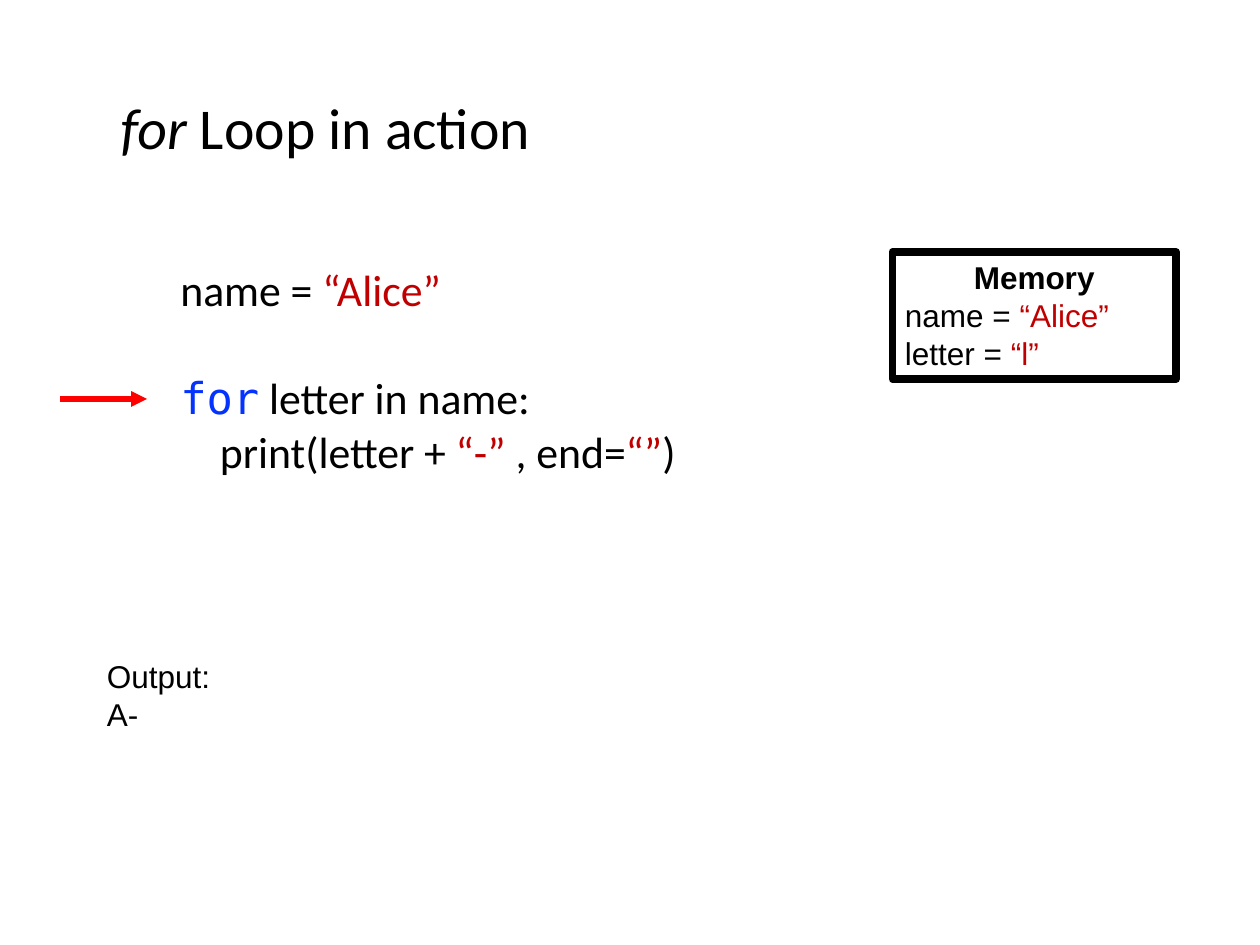
from lxml.etree import SubElement
from pptx import Presentation
from pptx.dml.color import RGBColor
from pptx.enum.shapes import MSO_CONNECTOR, MSO_SHAPE
from pptx.enum.text import MSO_ANCHOR, PP_ALIGN
from pptx.oxml.ns import qn
from pptx.util import Inches, Pt

COLS, ROWS = 120, 90
CELL = Inches(10) / COLS
BLACK, RED, BLUE, ARROW_RED = "000000", "C00000", "0432FF", "FF0000"

TITLE = {"size": Pt(33), "name": "Calibri"}
CODE = {"size": Pt(25), "name": "Calibri"}
KEYWORD = {"name": "DejaVu Sans Mono", "color": BLUE}
NOTE = {"size": Pt(18), "name": "Arial"}
STRING = {"color": RED}
TIGHT = {"line_spacing": 0.9}


def grid(*cells):
    """Turn grid columns and rows into slide lengths."""
    return [round(c * CELL) for c in cells]


def rgb(color):
    return RGBColor.from_string(color)


def set_attrs(obj, values):
    for name, value in values.items():
        setattr(obj, name, value)


def write(sp, base, paragraphs):
    """Fill a shape from (paragraph format, [(text, font format), ...]) pairs."""
    tf = sp.text_frame
    tf.word_wrap = True
    for i, (layout, runs) in enumerate(paragraphs):
        p = tf.add_paragraph() if i else tf.paragraphs[0]
        set_attrs(p, layout)
        for text, extra in runs:
            r = p.add_run()
            r.text = text
            font = {"color": BLACK, **base, **extra}
            r.font.color.rgb = rgb(font.pop("color"))
            set_attrs(r.font, font)


def add_text(s, box, base, paragraphs, anchor=MSO_ANCHOR.TOP):
    sp = s.shapes.add_textbox(*grid(*box))
    sp.text_frame.vertical_anchor = anchor
    write(sp, base, paragraphs)


def add_frame(s, box, base, paragraphs):
    sp = s.shapes.add_shape(MSO_SHAPE.RECTANGLE, *grid(*box))
    sp.shadow.inherit = False
    sp.fill.background()
    sp.line.color.rgb = rgb(BLACK)
    sp.line.width = Pt(4.5)
    sp.text_frame.vertical_anchor = MSO_ANCHOR.TOP
    write(sp, base, paragraphs)


def add_arrow(s, ends, color, width):
    line = s.shapes.add_connector(MSO_CONNECTOR.STRAIGHT, *grid(*ends))
    line.line.color.rgb = rgb(color)
    line.line.width = Pt(width)
    SubElement(line.line._get_or_add_ln(), qn("a:tailEnd"), type="triangle")
    SubElement(line._element.spPr, qn("a:effectLst"))


def main():
    prs = Presentation()
    prs.slide_width, prs.slide_height = grid(COLS, ROWS)
    s = prs.slides.add_slide(prs.slide_layouts[6])

    add_text(s, (10.3, 8, 104, 9), TITLE, [
        (TIGHT, [("for", {"italic": True}), (" Loop in action", {})]),
    ], MSO_ANCHOR.MIDDLE)

    add_text(s, (16, 25, 54, 55), CODE, [
        (TIGHT, [("name = ", {}), ("“Alice”", STRING)]),
        ({**TIGHT, "space_before": Pt(35)},
         [("for", KEYWORD), (" letter in name:", {})]),
        ({**TIGHT, "space_before": Pt(3.8)},
         [("    print(letter + ", {}), ("“-”", STRING), (" , end=", {}),
          ("“”", STRING), (")", {})]),
    ])

    left = {"alignment": PP_ALIGN.LEFT}
    add_frame(s, (85, 24, 27, 12.1), NOTE, [
        ({"alignment": PP_ALIGN.CENTER}, [("Memory", {"bold": True})]),
        (left, [("name = ", {}), ("“Alice”", STRING)]),
        (left, [("letter = ", {}), ("“l”", STRING)]),
    ])

    add_arrow(s, (5.75, 38, 14, 38), ARROW_RED, 3)

    add_text(s, (9, 62, 49, 8.5), NOTE, [
        ({}, [("Output:", {})]),
        ({}, [("A-", {})]),
    ])

    prs.save("out.pptx")


if __name__ == "__main__":
    main()
